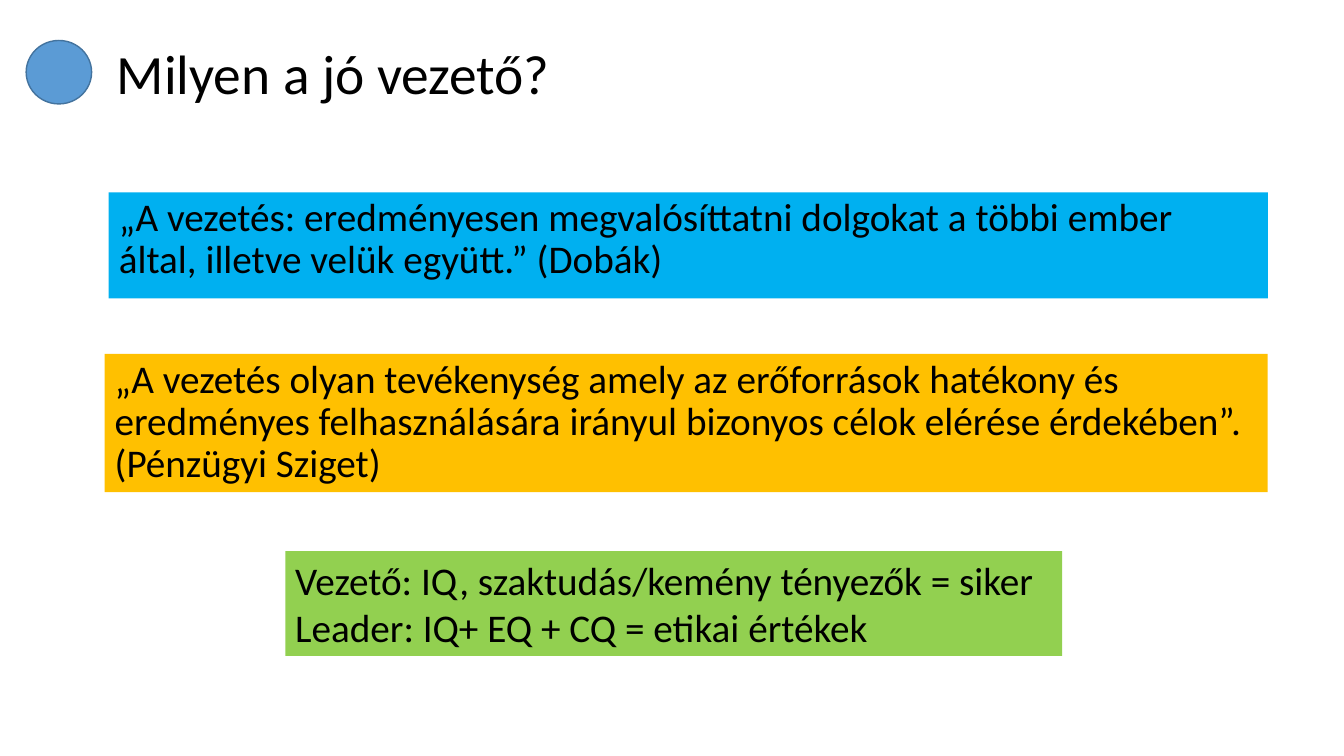
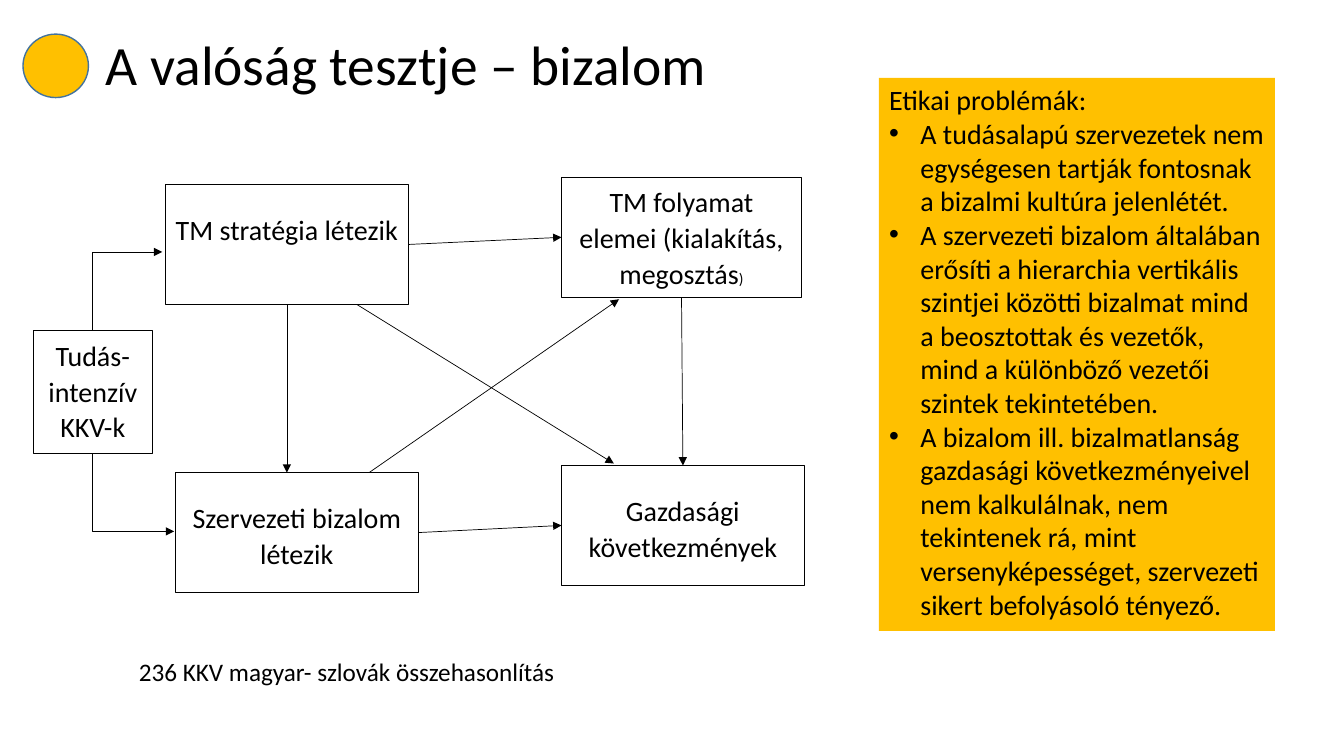
from dataclasses import dataclass

from lxml.etree import SubElement
from pptx import Presentation
from pptx.dml.color import RGBColor
from pptx.enum.shapes import MSO_CONNECTOR as CONNECTOR, MSO_SHAPE as SHAPE
from pptx.enum.text import MSO_ANCHOR as ANCHOR, MSO_AUTO_SIZE as AUTO_SIZE, PP_ALIGN as ALIGN
from pptx.oxml.ns import qn
from pptx.util import Cm, Pt


@dataclass(frozen=True)
class Theme:
    font: str = "Calibri"
    text: str = "000000"
    paper: str = "FFFFFF"
    blue: str = "00B0F0"
    gold: str = "FFC000"
    green: str = "92D050"
    dot_blue: str = "5B9BD5"
    dot_line: str = "43739E"
    title_size: float = 39.6
    quote_size: float = 28
    body_size: float = 20
    caption_size: float = 18
    small_size: float = 11
    thin: float = 0.5


THEME = Theme()
TITLE_AND_CONTENT = 1
DOT_SIZE = (1.65, 1.6)
BULLET_INDENT = 0.79
TOP, LEFT, BOTTOM, RIGHT = range(4)

# All places are (left, top, width, height) in centimetres.
LEADER = {
    "title": "Milyen a jó vezető?",
    "title_place": (2.69, 1.02, 11.96, 1.8),
    "dot": (0.66, 1.02), "dot_color": THEME.dot_blue,
    "body_place": (2.74, 4.85, 29.21, 2.67), "body_color": THEME.blue,
    "body": ["„A vezetés: eredményesen megvalósíttatni dolgokat a többi ember "
             "által, illetve velük együtt.” (Dobák)"],
    "body_format": {"size": THEME.quote_size, "line_spacing": 0.9},
}
LEADER_PANELS = [
    ((2.64, 8.92, 29.31, 3.48), THEME.gold, 0.9,
     ["„A vezetés olyan tevékenység amely az erőforrások hatékony és eredményes "
      "felhasználására irányul bizonyos célok elérése érdekében”. (Pénzügyi Sziget)"]),
    ((7.19, 13.89, 19.58, 2.64), THEME.green, 1.0,
     ["Vezető: IQ, szaktudás/kemény tényezők = siker",
      "Leader: IQ+ EQ + CQ = etikai értékek"]),
]

TRUST = {
    "title": "A valóság tesztje – bizalom",
    "title_place": (2.41, 0.94, 16.36, 1.52),
    "dot": (0.58, 0.86), "dot_color": THEME.gold,
    "body_place": (22.15, 1.96, 9.98, 13.94), "body_color": THEME.gold,
    "body": [
        "Etikai problémák:",
        "A tudásalapú szervezetek nem egységesen tartják fontosnak a bizalmi "
        "kultúra jelenlétét.",
        "A szervezeti bizalom általában erősíti a hierarchia vertikális szintjei "
        "közötti bizalmat mind a beosztottak és vezetők, mind a különböző vezetői "
        "szintek tekintetében.",
        "A bizalom ill. bizalmatlanság gazdasági következményeivel nem kalkulálnak, "
        "nem tekintenek rá, mint versenyképességet, szervezeti sikert befolyásoló "
        "tényező.",
    ],
    "body_format": {"size": THEME.body_size, "bullets_from": 1},
}
# name: (place, top inset, text runs)
TRUST_BOXES = {
    "strategy": ((4.17, 4.65, 6.12, 3.02), 0.64, ["TM stratégia létezik"]),
    "process": ((14.15, 4.47, 6.05, 3.02), 0.13,
                ["TM folyamat elemei (kialakítás, megosztás", (")", THEME.small_size)]),
    "trust": ((4.42, 11.91, 6.12, 3.02), 0.64, ["Szervezeti bizalom létezik"]),
    "results": ((14.15, 11.73, 6.12, 3.02), 0.64, ["Gazdasági következmények"]),
    "firms": ((0.84, 8.33, 3, 3.1), 0.13, ["Tudás-intenzív KKV-k"]),
}
# An end is either (box name, side) or a point.
STRAIGHT_ARROWS = [
    (("strategy", RIGHT), ("process", LEFT)),
    (("trust", RIGHT), ("results", LEFT)),
    (("strategy", BOTTOM), (7.23, 11.91)),
    (("process", BOTTOM), ("results", TOP)),
    ((9.3, 11.91), (15.6, 7.54)),
    ((8.99, 7.67), (15.47, 11.68)),
]
ELBOW_ARROWS = [((2.34, 8.33), (4.09, 6.35)), ((2.34, 11.43), (4.39, 13.39))]
CAPTION = "236 KKV magyar- szlovák összehasonlítás"
CAPTION_PLACE = (3.25, 16.41, 12.14, 1.02)


def set_attributes(target, values):
    for name, value in values.items():
        setattr(target, name, value)


def place_shape(shape, place):
    set_attributes(shape, dict(zip(("left", "top", "width", "height"), map(Cm, place))))


def paint(shape, fill, line=None, line_width=THEME.thin):
    shape.fill.solid()
    shape.fill.fore_color.rgb = RGBColor.from_string(fill)
    if line:
        shape.line.color.rgb = RGBColor.from_string(line)
        shape.line.width = Pt(line_width)
    else:
        shape.line.fill.background()


def write(shape, paragraphs, size, line_spacing=1.0, align=ALIGN.LEFT,
          anchor=ANCHOR.TOP, top_inset=0.13, bullets_from=None):
    """Fill a shape; a paragraph is a string or a list of runs, a run a string or (text, size)."""
    frame = shape.text_frame
    set_attributes(frame, {"word_wrap": True, "auto_size": AUTO_SIZE.NONE,
                           "vertical_anchor": anchor, "margin_top": Cm(top_inset)})
    for index, runs in enumerate(paragraphs):
        paragraph = frame.add_paragraph() if index else frame.paragraphs[0]
        bulleted = bullets_from is not None and index >= bullets_from
        indent = Cm(BULLET_INDENT) if bulleted else 0
        properties = paragraph._p.get_or_add_pPr()
        properties.set("marL", str(indent))
        properties.set("indent", str(-indent))
        if bulleted:
            SubElement(properties, qn("a:buChar")).set("char", "•")
        else:
            SubElement(properties, qn("a:buNone"))
        set_attributes(paragraph, {"alignment": align, "line_spacing": line_spacing,
                                   "space_before": Pt(0), "space_after": Pt(0)})
        for part in [runs] if isinstance(runs, str) else runs:
            text, run_size = (part, size) if isinstance(part, str) else part
            run = paragraph.add_run()
            run.text = text
            set_attributes(run.font, {"name": THEME.font, "size": Pt(run_size)})
            run.font.color.rgb = RGBColor.from_string(THEME.text)


def add_panel(slide, place, fill, line=None, kind=SHAPE.RECTANGLE, line_width=THEME.thin):
    shape = slide.shapes.add_shape(kind, *map(Cm, place))
    shape.shadow.inherit = False
    paint(shape, fill, line, line_width)
    return shape


def add_base_slide(presentation, content):
    """Add a slide with its dot, title and coloured body."""
    slide = presentation.slides.add_slide(presentation.slide_layouts[TITLE_AND_CONTENT])
    title, body = slide.shapes.title, slide.placeholders[1]
    place_shape(title, content["title_place"])
    write(title, [content["title"]], THEME.title_size, 0.9, anchor=ANCHOR.MIDDLE)
    place_shape(body, content["body_place"])
    paint(body, content["body_color"])
    write(body, content["body"], **content["body_format"])
    add_panel(slide, content["dot"] + DOT_SIZE, content["dot_color"],
              THEME.dot_line, SHAPE.OVAL, 1)
    return slide


def add_arrow(slide, kind, start, end, boxes):
    points = [(0, 0) if isinstance(point[0], str) else point for point in (start, end)]
    arrow = slide.shapes.add_connector(kind, *(Cm(value) for point in points for value in point))
    for point, connect in ((start, arrow.begin_connect), (end, arrow.end_connect)):
        if isinstance(point[0], str):
            connect(boxes[point[0]], point[1])
    arrow.line.color.rgb = RGBColor.from_string(THEME.text)
    arrow.line.width = Pt(THEME.thin)
    SubElement(arrow.line._get_or_add_ln(), qn("a:tailEnd")).set("type", "triangle")
    properties = arrow._element.spPr
    SubElement(properties, qn("a:effectLst"))
    if kind == CONNECTOR.ELBOW:
        guide = SubElement(properties.find(qn("a:prstGeom")).find(qn("a:avLst")), qn("a:gd"))
        guide.set("name", "adj1")
        guide.set("fmla", "val 0")


def build_leader(presentation):
    slide = add_base_slide(presentation, LEADER)
    for place, color, spacing, paragraphs in LEADER_PANELS:
        write(add_panel(slide, place, color), paragraphs, THEME.quote_size, spacing)


def build_trust(presentation):
    slide = add_base_slide(presentation, TRUST)
    boxes = {}
    for name, (place, top_inset, runs) in TRUST_BOXES.items():
        boxes[name] = add_panel(slide, place, THEME.paper, THEME.text)
        write(boxes[name], [runs], THEME.body_size, 1.07, ALIGN.CENTER, top_inset=top_inset)
    for kind, arrows in ((CONNECTOR.STRAIGHT, STRAIGHT_ARROWS), (CONNECTOR.ELBOW, ELBOW_ARROWS)):
        for start, end in arrows:
            add_arrow(slide, kind, start, end, boxes)
    caption = slide.shapes.add_textbox(*map(Cm, CAPTION_PLACE))
    write(caption, [CAPTION], THEME.caption_size)


def main():
    presentation = Presentation()
    presentation.slide_width, presentation.slide_height = Cm(33.87), Cm(19.05)
    build_leader(presentation)
    build_trust(presentation)
    presentation.save("out.pptx")


if __name__ == "__main__":
    main()
